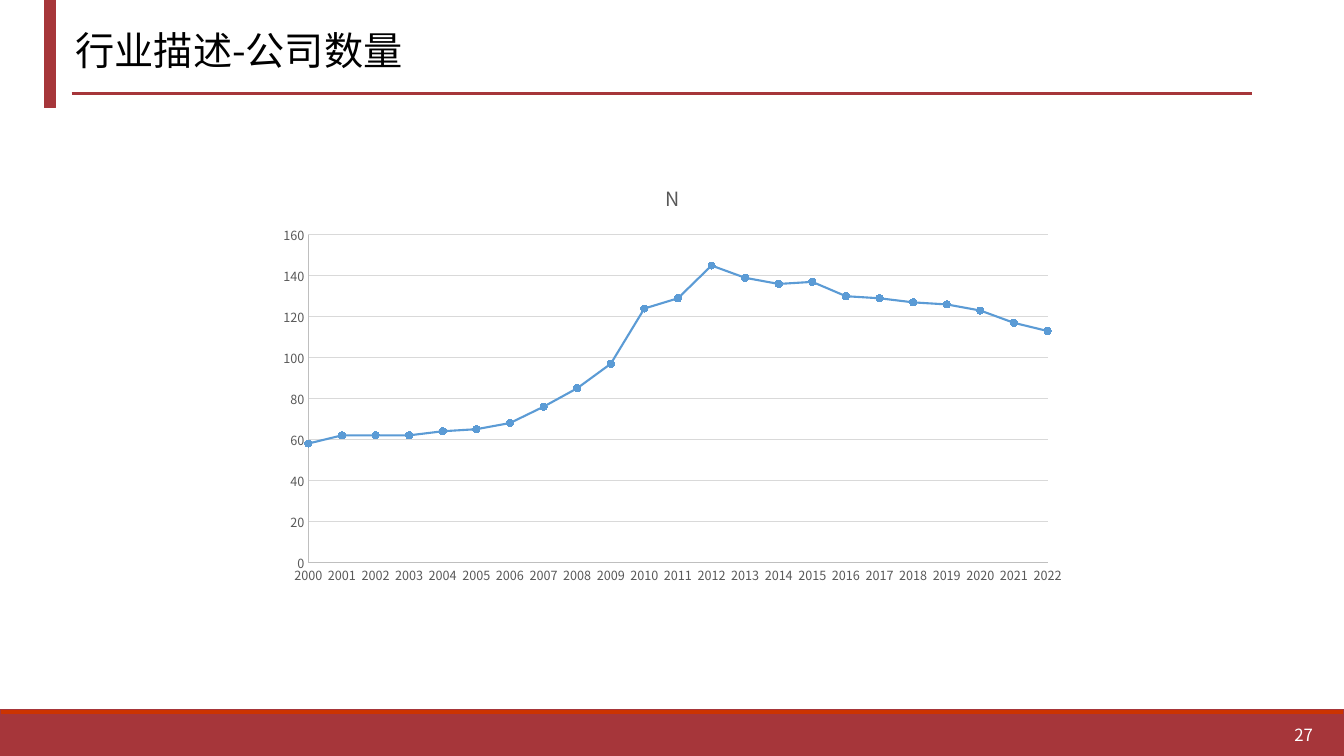
from lxml import etree
from pptx import Presentation
from pptx import util as u
from pptx.chart.data import XyChartData
from pptx.dml.color import RGBColor
from pptx.enum import chart as charts, shapes, text
from pptx.oxml.ns import qn

FONT = "Noto Sans CJK SC"
COLORS = {
    "red": "A6363A", "orange": "CC3300", "black": "000000", "white": "FFFFFF",
    "gray": "595959", "axis": "BFBFBF", "grid": "D9D9D9", "blue": "5B9BD5",
}
COMPANY_COUNTS = [58, 62, 62, 62, 64, 65, 68, 76, 85, 97, 124, 129,
                  145, 139, 136, 137, 130, 129, 127, 126, 123, 117, 113]


def set_font(font, size, color):
    font.name = FONT
    font.size = u.Pt(size)
    font.bold = False
    font.color.rgb = RGBColor.from_string(COLORS[color])


def set_line(line, color, width):
    line.color.rgb = RGBColor.from_string(COLORS[color])
    line.width = u.Pt(width)


presentation = Presentation()
presentation.slide_width = u.Inches(13.33)
presentation.slide_height = u.Inches(7.5)
slide = presentation.slides.add_slide(presentation.slide_layouts[5])

# Red frame: footer, its top edge, and the title marker
for left, top, width, height, fill in [
    (0, 7.09, 13.33, 0.42, "red"),
    (0, 7.04, 13.33, 0.05, "orange"),
    (0.44, 0, 0.11, 1.07, "red"),
]:
    bar = slide.shapes.add_shape(
        shapes.MSO_SHAPE.RECTANGLE,
        u.Inches(left), u.Inches(top), u.Inches(width), u.Inches(height))
    bar.shadow.inherit = False
    bar.fill.solid()
    bar.fill.fore_color.rgb = RGBColor.from_string(COLORS[fill])
    set_line(bar.line, "red", 1)

title_rule = slide.shapes.add_connector(
    shapes.MSO_CONNECTOR.STRAIGHT,
    u.Inches(0.71), u.Inches(0.93), u.Inches(12.42), u.Inches(0.93))
set_line(title_rule.line, "red", 2.25)
etree.SubElement(title_rule._element.spPr, qn("a:effectLst"))

# Title and page number
title = slide.shapes.title
title.left, title.top = u.Inches(0.65), u.Inches(-0.02)
title.width, title.height = u.Inches(11.3), u.Inches(1.09)
title.text_frame.text = "行业描述-公司数量"
title.text_frame.paragraphs[0].line_spacing = 0.9

page_number = slide.shapes.add_textbox(
    u.Inches(10.12), u.Inches(7.09), u.Inches(3), u.Inches(0.4))
page_number.text_frame.text = "27"

for shape, size, color, alignment in [
    (title, 28, "black", text.PP_ALIGN.LEFT),
    (page_number, 12, "white", text.PP_ALIGN.RIGHT),
]:
    shape.text_frame.word_wrap = True
    shape.text_frame.vertical_anchor = text.MSO_ANCHOR.MIDDLE
    paragraph = shape.text_frame.paragraphs[0]
    paragraph.alignment = alignment
    set_font(paragraph.font, size, color)
    run_properties = paragraph.runs[0]._r.get_or_add_rPr()
    etree.SubElement(run_properties, qn("a:ea"), typeface=FONT)

# Number of companies by year
chart_data = XyChartData()
companies = chart_data.add_series("N")
for year, count in enumerate(COMPANY_COUNTS, start=2000):
    companies.add_data_point(year, count)
chart = slide.shapes.add_chart(
    charts.XL_CHART_TYPE.XY_SCATTER_LINES,
    u.Inches(2.65), u.Inches(1.62), u.Inches(8.04), u.Inches(4.26),
    chart_data).chart
set_font(chart.font, 10, "black")
chart.has_legend = False
chart.has_title = True
chart.chart_title.text_frame.text = "N"
set_font(chart.chart_title.text_frame.paragraphs[0].font, 14, "gray")
chart.plots[0].vary_by_categories = False

for axis, minimum, maximum, step in [
    (chart.category_axis, 2000, 2022, 1),
    (chart.value_axis, 0, 160, 20),
]:
    axis.minimum_scale, axis.maximum_scale = minimum, maximum
    axis.major_unit = step
    axis.major_tick_mark = charts.XL_TICK_MARK.NONE
    axis.minor_tick_mark = charts.XL_TICK_MARK.NONE
    axis.tick_labels.number_format = "General"
    axis.tick_labels.number_format_is_linked = False
    set_font(axis.tick_labels.font, 9, "gray")
    set_line(axis.format.line, "axis", 0.75)
chart.category_axis.has_major_gridlines = False
chart.value_axis.has_major_gridlines = True
set_line(chart.value_axis.major_gridlines.format.line, "grid", 0.75)

series = chart.plots[0].series[0]
series.smooth = False
set_line(series.format.line, "blue", 1.5)
series.marker.style = charts.XL_MARKER_STYLE.CIRCLE
series.marker.size = 5
series.marker.format.fill.solid()
series.marker.format.fill.fore_color.rgb = RGBColor.from_string(COLORS["blue"])
set_line(series.marker.format.line, "blue", 0.75)

presentation.save("out.pptx")
